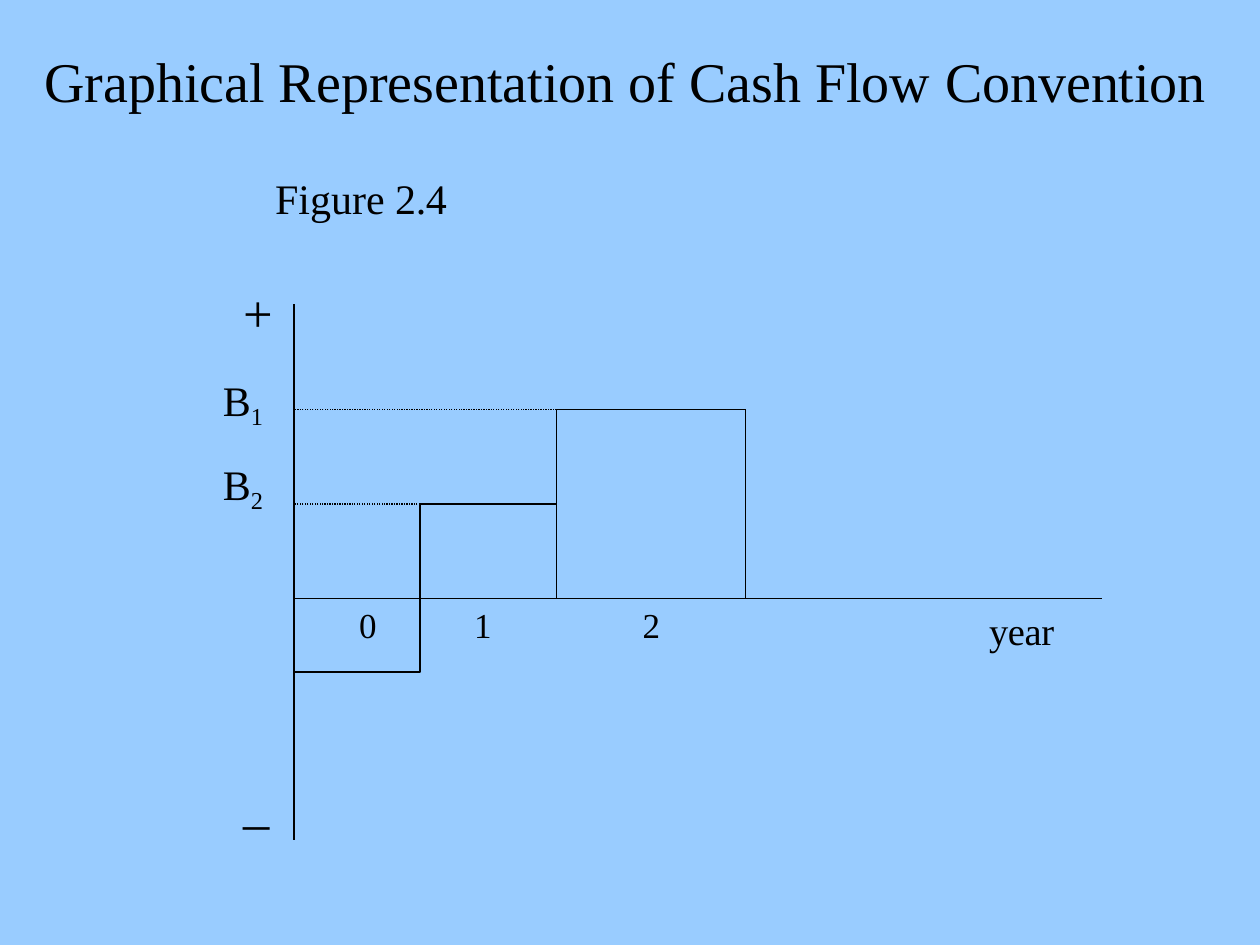
from pptx import Presentation
from pptx.dml.color import RGBColor
from pptx.enum.dml import MSO_LINE
from pptx.enum.shapes import MSO_SHAPE
from pptx.enum.text import MSO_ANCHOR, PP_ALIGN
from pptx.util import Inches, Pt

RECTANGLE = MSO_SHAPE.RECTANGLE
DOTTED, TOP = MSO_LINE.ROUND_DOT, MSO_ANCHOR.TOP
LEFT, CENTER = PP_ALIGN.LEFT, PP_ALIGN.CENTER
SKY = RGBColor(0x99, 0xCC, 0xFF)
BLACK = RGBColor(0, 0, 0)
FONT = "Times New Roman"

deck = Presentation()
deck.slide_width, deck.slide_height = Inches(10), Inches(7.5)
page = deck.slides.add_slide(deck.slide_layouts[6])

# Grid of 120 columns by 90 rows
COLUMNS, ROWS = 120, 90
CELL = deck.slide_width / COLUMNS


def grid(*cells):
    return [round(cell * CELL) for cell in cells]


def write(box, paragraphs, inset=0.01):
    """Each paragraph: indent in cells, format values, runs of (text, size, spacing, baseline)."""
    frame = box.text_frame
    for name, value in {"word_wrap": True, "vertical_anchor": TOP, "margin_left": 0,
                        "margin_right": 0, "margin_top": Inches(inset),
                        "margin_bottom": 0}.items():
        setattr(frame, name, value)
    for number, (indent, formats, runs) in enumerate(paragraphs):
        para = frame.add_paragraph() if number else frame.paragraphs[0]
        for name, value in formats.items():
            setattr(para, name, value)
        para._p.get_or_add_pPr().set("marL", str(grid(indent)[0]))
        for text, size, spacing, baseline in runs:
            span = para.add_run()
            span.text = text
            for name, value in {"name": FONT, "size": Pt(size)}.items():
                setattr(span.font, name, value)
            span.font.color.rgb = BLACK
            properties = span._r.get_or_add_rPr()
            properties.set("spc", str(spacing))
            if baseline:
                properties.set("baseline", str(baseline))


# Sky backdrop
pen = page.shapes.build_freeform(COLUMNS, 0, scale=CELL)
pen.add_line_segments([(0, 0), (0, ROWS), (COLUMNS, ROWS)], close=True)
backdrop = pen.convert_to_shape()
backdrop.shadow.inherit = False
backdrop.fill.solid()
backdrop.fill.fore_color.rgb = SKY
backdrop.line.fill.background()

# Columns and rows of the diagram
AXIS_X, AXIS_Y = 28, 57
B1_ROW, B2_ROW = 39, 48
FIRST_X, SECOND_X, THIRD_X = 40, 53, 71
BAR_0_BOTTOM = 64

axes_and_bars = [
    [(AXIS_X, 29), (AXIS_X, 80)],
    [(AXIS_X, AXIS_Y), (105, AXIS_Y)],
    [(FIRST_X, BAR_0_BOTTOM), (FIRST_X, B2_ROW)],
    [(FIRST_X, B2_ROW), (SECOND_X, B2_ROW)],
    [(SECOND_X, AXIS_Y), (SECOND_X, B1_ROW)],
    [(SECOND_X, B1_ROW), (THIRD_X, B1_ROW)],
    [(THIRD_X, B1_ROW), (THIRD_X, AXIS_Y)],
]
guides = [
    [(FIRST_X, B2_ROW), (AXIS_X, B2_ROW)],
    [(SECOND_X, B1_ROW), (AXIS_X, B1_ROW)],
]

# Step outline with its axes, then the dotted guides
for strokes, dash in [(axes_and_bars, None), (guides, DOTTED)]:
    pen = page.shapes.build_freeform(*strokes[0][0], scale=CELL)
    for start, end in strokes:
        pen.move_to(*start)
        pen.add_line_segments([end], close=False)
    outline = pen.convert_to_shape()
    outline.shadow.inherit = False
    outline.fill.background()
    outline.line.color.rgb = BLACK
    outline.line.width = Pt(0.72)
    if dash:
        outline.line.dash_style = dash

# Outlay of year 0, below the axis
outlay = page.shapes.add_shape(
    RECTANGLE, *grid(AXIS_X, AXIS_Y, FIRST_X - AXIS_X, BAR_0_BOTTOM - AXIS_Y))
outlay.shadow.inherit = False
outlay.fill.background()
outlay.line.color.rgb = BLACK
outlay.line.width = Pt(0.84)
write(outlay, [(2.08, {"alignment": CENTER, "space_before": Pt(2.9)},
                [("0", 20, -50, 0)])], inset=0.04)

# Title and axis labels: left, top, width, height, runs
for *place, runs in [
    (4.08, 4.28, 111, 6.72, [("Graphical Representation of Cash Flow ", 32, 0, 0),
                             ("Convention", 32, -10, 0)]),
    (45.05, 57.36, 2.04, 4.32, [("1", 20, -50, 0)]),
    (61.08, 57.36, 2.04, 4.32, [("2", 20, -50, 0)]),
    (94.08, 57.68, 6.6, 4.68, [("year", 22, -20, 0)]),
    (23.04, 73.32, 2.88, 6.36, [("_", 30, -50, 0)]),
]:
    box = page.shapes.add_textbox(*grid(*place))
    write(box, [(0.12, {"alignment": LEFT, "space_before": Pt(1)}, runs)])

# Figure number and the labels of the cash flow axis
box = page.shapes.add_textbox(*grid(20.52, 16.32, 22.44, 32.16))
benefit_labels = [
    (0.72, {"line_spacing": Pt(48), "space_before": Pt(before)},
     [("B", 24, -20, 0), (index, 24, -40, -21000)])
    for index, before in [("1", 1.8), ("2", 0)]
]
write(box, [
    (5.68, {"space_before": Pt(1)}, [("Figure ", 24, 0, 0), ("2.4", 24, -20, 0)]),
    (2.64, {"space_before": Pt(32.4)}, [("+", 30, -50, 0)]),
    *benefit_labels,
])

deck.save("out.pptx")
